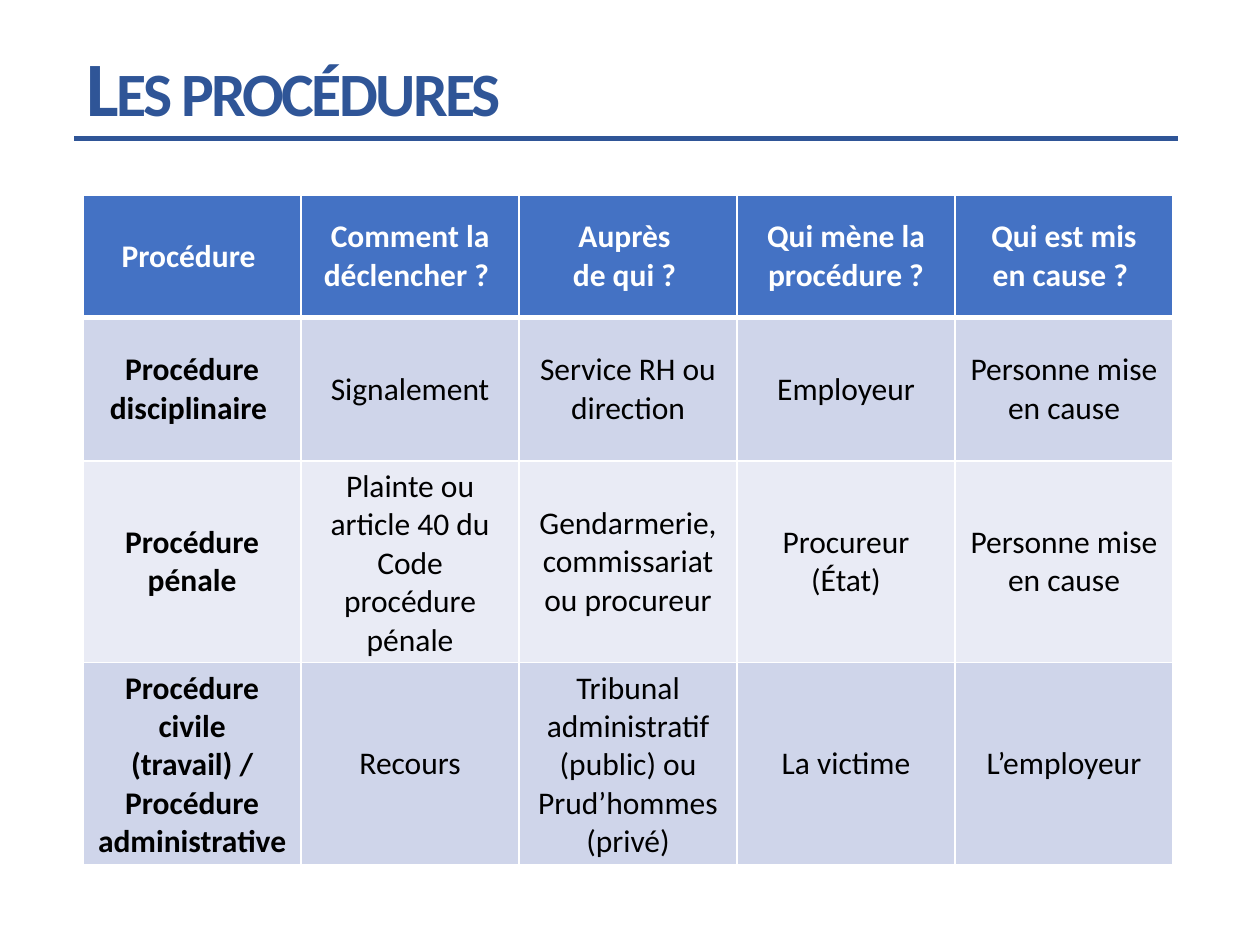
from dataclasses import dataclass

from lxml import etree
from pptx import Presentation
from pptx.dml.color import RGBColor
from pptx.enum import shapes, text
from pptx.oxml import ns
from pptx.util import Inches, Pt

FONT = "Calibri"
NAVY = RGBColor(0x2F, 0x55, 0x97)
HEADER_BLUE = RGBColor(0x44, 0x72, 0xC4)
BAND_DARK = RGBColor(0xCF, 0xD5, 0xEA)
BAND_LIGHT = RGBColor(0xE9, 0xEB, 0xF5)
WHITE = RGBColor(0xFF, 0xFF, 0xFF)
BLACK = RGBColor(0, 0, 0)

COLUMN_WIDTH = 1.73


@dataclass
class TableRow:
    height: float
    fill: RGBColor
    cells: tuple[str, ...]
    is_header: bool = False


ROWS = [
    TableRow(0.97, HEADER_BLUE, (
        "Procédure ", "Comment la déclencher ? ", "Auprès \nde qui ? ",
        "Qui mène la procédure ?", "Qui est mis\nen cause ? "), is_header=True),
    TableRow(1.14, BAND_DARK, (
        "Procédure disciplinaire ", "Signalement", "Service RH ou direction",
        "Employeur", "Personne mise en cause")),
    TableRow(1.44, BAND_LIGHT, (
        "Procédure pénale", "Plainte ou article 40 du Code procédure pénale",
        "Gendarmerie, commissariat ou procureur", "Procureur (État)",
        "Personne mise en cause")),
    TableRow(1.44, BAND_DARK, (
        "Procédure civile (travail) / Procédure administrative", "Recours",
        "Tribunal administratif (public) ou Prud’hommes (privé)",
        "La victime", "L’employeur")),
]


def style_run(run, size: float, color: RGBColor, bold: bool) -> None:
    run.font.name = FONT
    run.font.size = Pt(size)
    run.font.color.rgb = color
    run.font.bold = bold


def add_borders(cell, bottom: float) -> None:
    """Draw white cell borders, 1 pt wide except for the bottom one."""
    properties = cell._tc.get_or_add_tcPr()
    for side, width in {"L": 1, "R": 1, "T": 1, "B": bottom}.items():
        line = etree.SubElement(properties, ns.qn(f"a:ln{side}"), w=str(Pt(width)))
        fill = etree.SubElement(line, ns.qn("a:solidFill"))
        etree.SubElement(fill, ns.qn("a:srgbClr"), val=str(WHITE))


def fill_cell(cell, wording: str, row: TableRow, bold: bool, bottom: float) -> None:
    add_borders(cell, bottom)
    cell.fill.solid()
    cell.fill.fore_color.rgb = row.fill
    cell.vertical_anchor = text.MSO_ANCHOR.MIDDLE
    cell.text_frame.text = wording
    for paragraph in cell.text_frame.paragraphs:
        paragraph.alignment = text.PP_ALIGN.CENTER
        for run in paragraph.runs:
            style_run(run, 18, WHITE if row.is_header else BLACK, bold)


def add_procedures(slide) -> None:
    column_count = len(ROWS[0].cells)
    frame = slide.shapes.add_table(
        len(ROWS), column_count, Inches(0.66), Inches(1.55),
        Inches(COLUMN_WIDTH * column_count), Inches(5.31))
    table = frame.table
    for column in table.columns:
        column.width = Inches(COLUMN_WIDTH)
    for r, row in enumerate(ROWS):
        table.rows[r].height = Inches(row.height)
        for c, wording in enumerate(row.cells):
            fill_cell(table.cell(r, c), wording, row,
                      bold=row.is_header or c == 0,
                      bottom=3 if row.is_header else 1)
    frame.height = Inches(5.31)


def add_title(slide) -> None:
    title = slide.shapes.title
    title.left, title.top = Inches(0.59), Inches(0.26)
    title.width, title.height = Inches(7.93), Inches(0.84)
    frame = title.text_frame
    frame.text = "Les procédures"
    frame.word_wrap = True
    frame.auto_size = text.MSO_AUTO_SIZE.SHAPE_TO_FIT_TEXT
    frame.vertical_anchor = text.MSO_ANCHOR.TOP
    heading = frame.paragraphs[0]
    heading.alignment = text.PP_ALIGN.LEFT
    run = heading.runs[0]
    style_run(run, 44, NAVY, True)
    run_properties = run._r.get_or_add_rPr()
    run_properties.set("spc", "-150")
    run_properties.set("cap", "small")


def add_title_rule(slide) -> None:
    rule = slide.shapes.add_connector(
        shapes.MSO_CONNECTOR.STRAIGHT,
        Inches(0.59), Inches(1.1), Inches(9.35), Inches(1.1))
    rule.line.color.rgb = NAVY
    rule.line.width = Pt(3)
    etree.SubElement(rule._element.spPr, ns.qn("a:effectLst"))


def main() -> None:
    deck = Presentation()
    deck.slide_width, deck.slide_height = Inches(10), Inches(7.5)
    slide = deck.slides.add_slide(deck.slide_layouts[5])
    add_procedures(slide)
    add_title(slide)
    add_title_rule(slide)
    deck.save("out.pptx")


if __name__ == "__main__":
    main()
